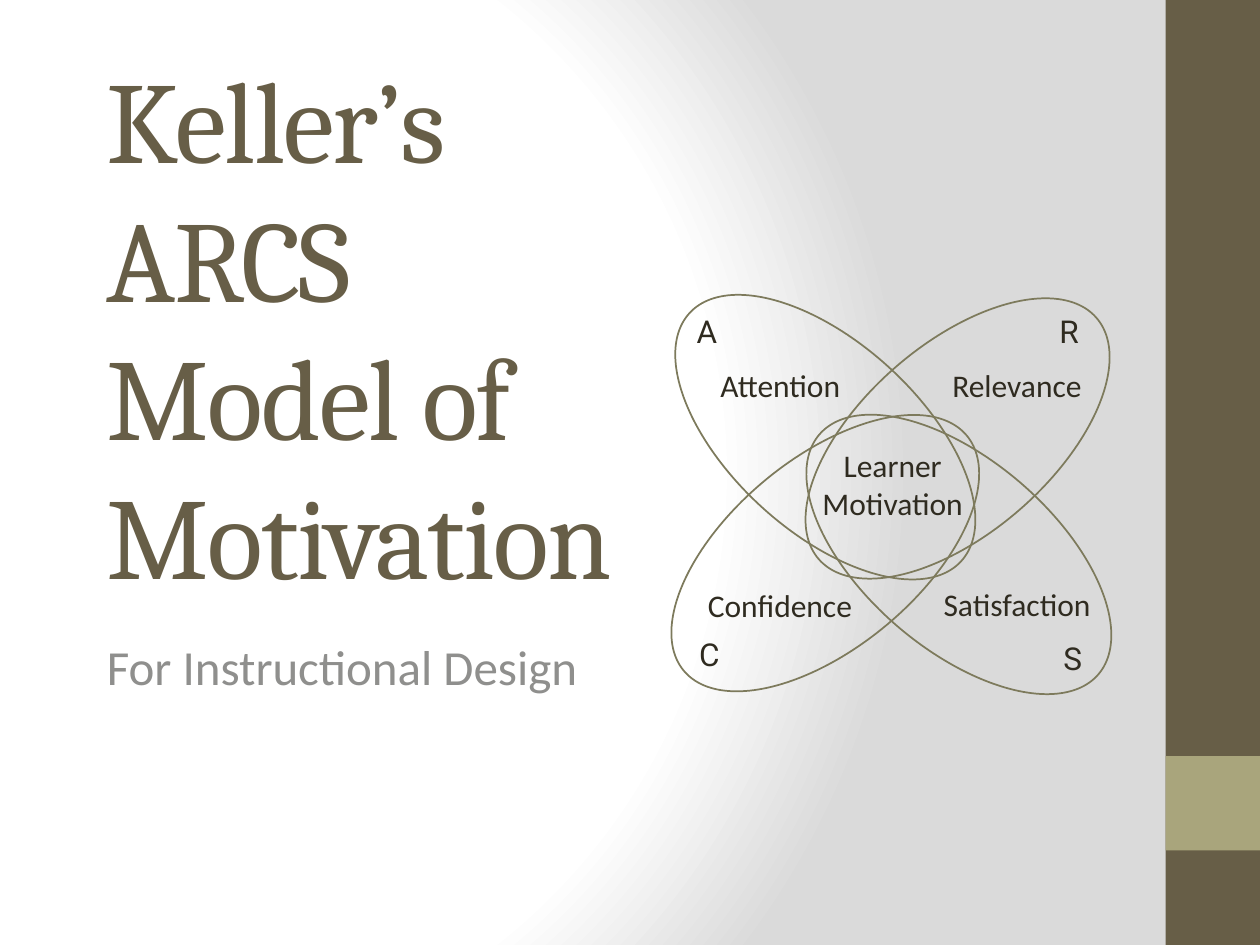
from lxml import etree
from pptx import Presentation
from pptx.dml.color import RGBColor
from pptx.enum.shapes import MSO_SHAPE
from pptx.enum.text import MSO_ANCHOR, MSO_AUTO_SIZE, PP_ALIGN
from pptx.oxml import parse_xml
from pptx.oxml.ns import nsdecls, qn
from pptx.util import Inches, Pt

COLORS = {"brown": "675E47", "sage": "A9A57C", "gray": "8F8F8D",
          "outline": "7D7A5C", "ink": "2F2B20",
          "white": "FFFFFF", "silver": "DADADA"}

TITLE = "Keller’s ARCS Model of Motivation"
SUBTITLE = "For Instructional Design"

# Side bands: top, height, color
BANDS = [(0, 7.5, "brown"), (6, 0.75, "sage")]

# Petals: left, top, rotation
PETAL_SIZE = (2.92, 1.5)
PETALS = [(5.09, 2.72, 42.4), (6.15, 3.65, 40.7),
          (6.14, 2.73, 319), (5.09, 3.64, 320.3)]

# Labels: lines, font, left, top, width, height
LABELS = [
    (["A"], "Roboto", 5.43, 2.43, 0.39, 0.4),
    (["Attention"], "Calibri", 5.62, 2.86, 1.17, 0.4),
    (["R"], "Roboto", 8.31, 2.43, 0.37, 0.4),
    (["Relevance"], "Calibri", 7.46, 2.86, 1.24, 0.4),
    (["C"], "Roboto", 5.45, 4.99, 0.36, 0.4),
    (["Confidence"], "Calibri", 5.52, 4.6, 1.36, 0.4),
    (["Satisfaction"], "Calibri", 7.39, 4.59, 1.38, 0.4),
    (["S"], "Roboto", 8.34, 5.02, 0.35, 0.4),
    (["Learner", "Motivation"], "Calibri", 6.42, 3.49, 1.33, 0.71),
]


def rgb(name):
    return RGBColor.from_string(COLORS[name])


def add_shape(slide, kind, left, top, width, height):
    shape = slide.shapes.add_shape(
        kind, Inches(left), Inches(top), Inches(width), Inches(height))
    shape.shadow.inherit = False
    return shape


def add_text(slide, lines, font, size, color, left, top, width, height,
             wrap=True, align=PP_ALIGN.LEFT):
    box = slide.shapes.add_textbox(
        Inches(left), Inches(top), Inches(width), Inches(height))
    frame = box.text_frame
    frame.word_wrap = wrap
    for i, line in enumerate(lines):
        paragraph = frame.add_paragraph() if i else frame.paragraphs[0]
        paragraph.alignment = align
        run = paragraph.add_run()
        run.text = line
        run.font.name = font
        run.font.size = Pt(size)
        run.font.color.rgb = rgb(color)
    return frame


def set_background(slide):
    fill = slide.background.fill
    fill.gradient()
    gradient = slide.background._cSld.find(".//" + qn("a:gradFill"))
    for child in list(gradient):
        gradient.remove(child)
    stops = etree.SubElement(gradient, qn("a:gsLst"))
    for percent, color in [(0, "white"), (75, "white"), (100, "silver")]:
        stop = etree.SubElement(stops, qn("a:gs"), pos=str(percent * 1000))
        etree.SubElement(stop, qn("a:srgbClr"), val=COLORS[color])
    gradient.append(parse_xml(
        f'<a:path {nsdecls("a")} path="circle">'
        '<a:fillToRect l="20000" t="50000" r="100000" b="50000"/></a:path>'))


def main():
    prs = Presentation()
    prs.slide_width, prs.slide_height = Inches(10), Inches(7.5)
    slide = prs.slides.add_slide(prs.slide_layouts[6])
    set_background(slide)

    # Side bands
    for top, height, color in BANDS:
        band = add_shape(slide, MSO_SHAPE.RECTANGLE, 9.25, top, 0.75, height)
        band.fill.solid()
        band.fill.fore_color.rgb = rgb(color)
        band.line.fill.background()

    # Title and subtitle
    title = add_text(slide, [TITLE], "Cambria", 66, "brown",
                     0.75, 2.08, 4.42, 2.75)
    title.vertical_anchor = MSO_ANCHOR.BOTTOM
    title.paragraphs[0].runs[0].font._element.set("spc", "-100")
    add_text(slide, [SUBTITLE], "Calibri", 28, "gray", 0.75, 5, 7.07, 1.17)

    # Overlapping petals
    for left, top, rotation in PETALS:
        petal = add_shape(slide, MSO_SHAPE.OVAL, left, top, *PETAL_SIZE)
        petal.rotation = rotation
        petal.fill.background()
        petal.line.color.rgb = rgb("outline")
        petal.line.width = Pt(1)

    # Petal labels
    for lines, font, *place in LABELS:
        align = PP_ALIGN.CENTER if len(lines) > 1 else PP_ALIGN.LEFT
        label = add_text(slide, lines, font, 18, "ink", *place,
                         wrap=False, align=align)
        label.auto_size = MSO_AUTO_SIZE.SHAPE_TO_FIT_TEXT

    prs.save("out.pptx")


if __name__ == "__main__":
    main()
